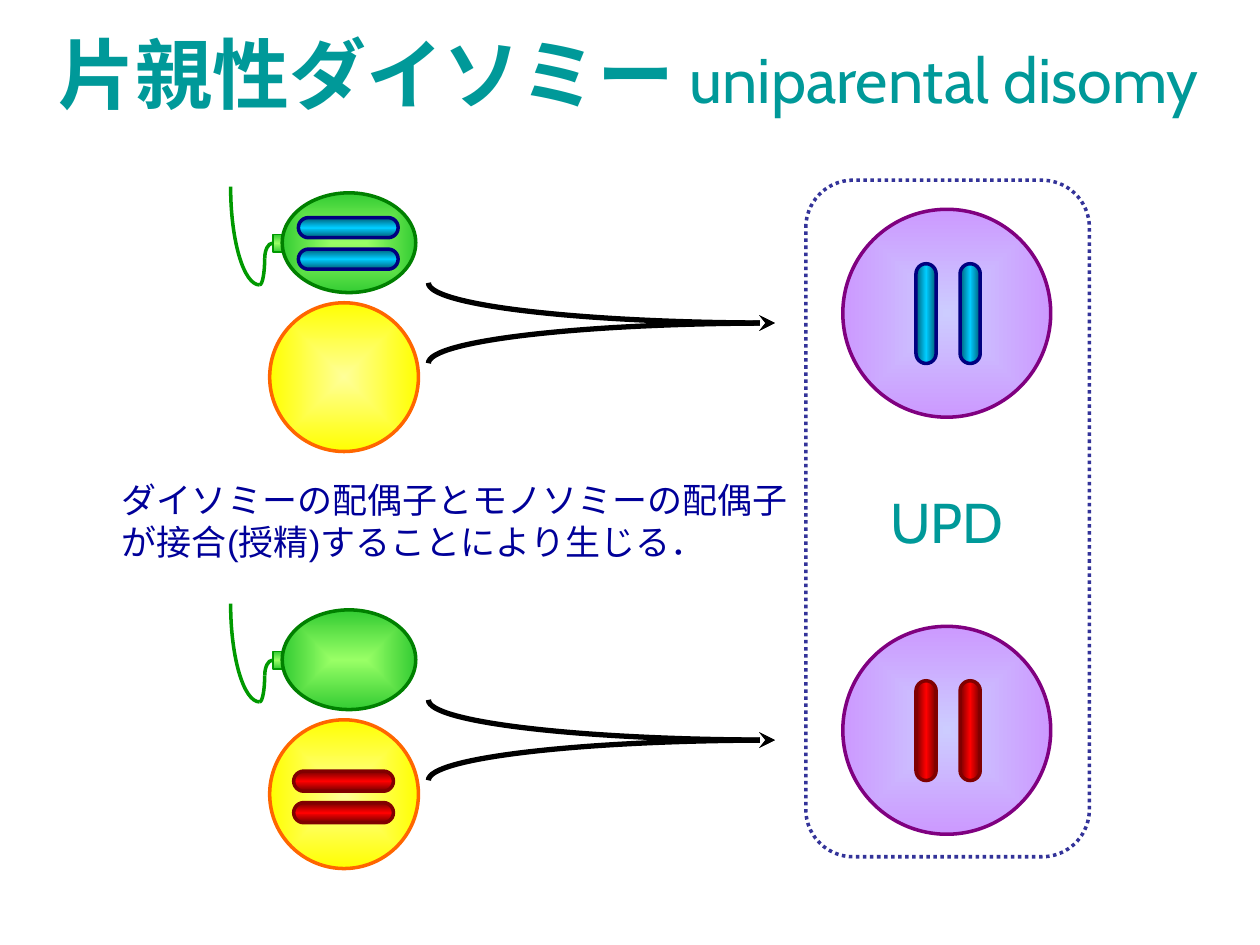
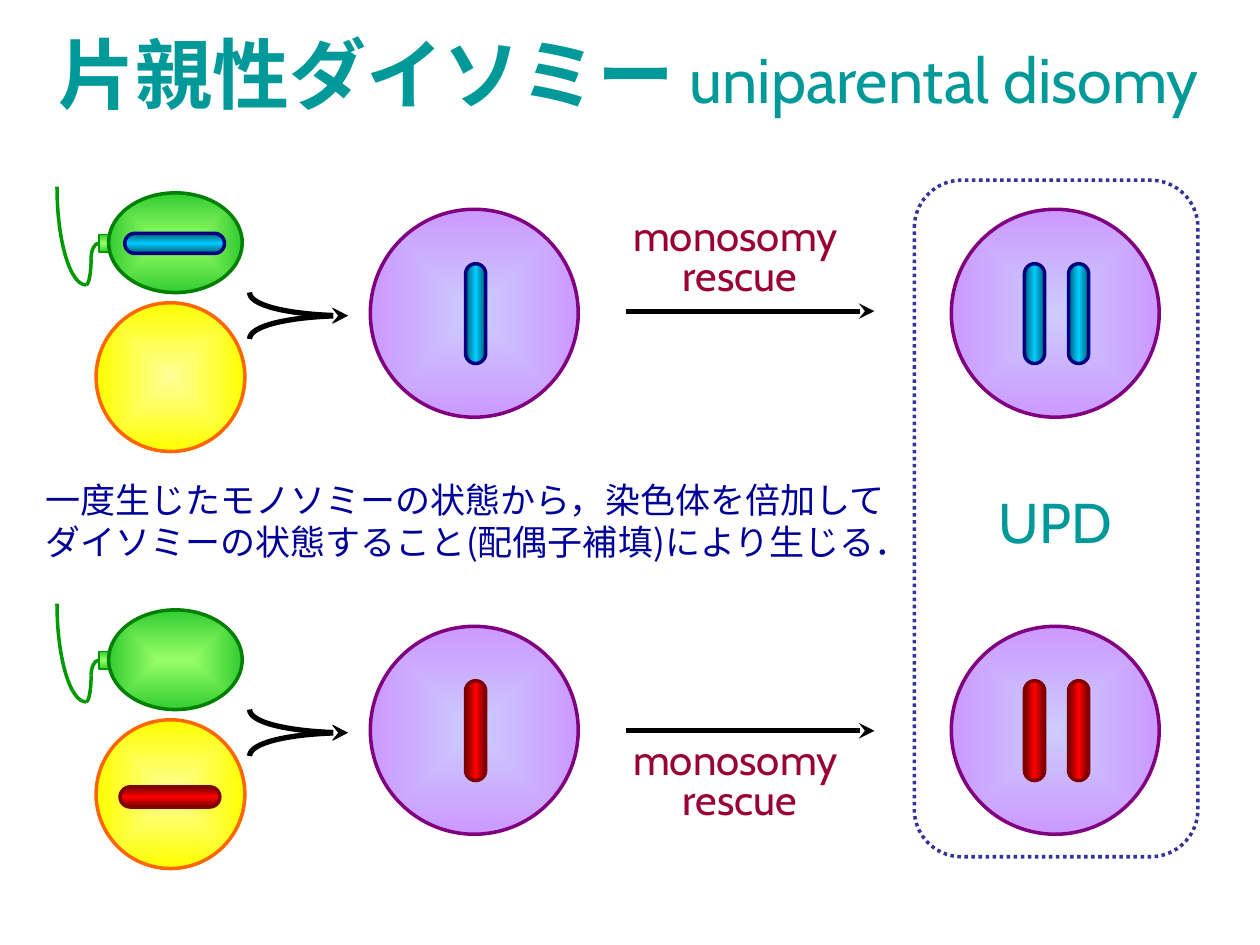
from lxml.etree import SubElement
from pptx import Presentation
from pptx.dml.color import RGBColor as RGB
from pptx.enum.dml import MSO_LINE as Dash
from pptx.enum.shapes import MSO_CONNECTOR as Link, MSO_SHAPE as Form
from pptx.enum.text import MSO_ANCHOR as Anchor, MSO_AUTO_SIZE as Fit, PP_ALIGN as Align
from pptx.oxml.ns import qn
from pptx.util import Pt

TEAL = RGB(0x00, 0x99, 0x99)
NAVY = RGB(0x00, 0x00, 0x99)
WINE = RGB(0x99, 0x00, 0x33)
BLACK = RGB(0x00, 0x00, 0x00)
FRAME = RGB(0x33, 0x33, 0x99)
TAIL = RGB(0x00, 0x99, 0x00)
LEAF = RGB(0x33, 0xCC, 0x33)
LIME = RGB(0x99, 0xFF, 0x66)
MOSS = RGB(0x00, 0x80, 0x00)
CREAM = RGB(0xFF, 0xFF, 0x99)
YOLK = RGB(0xFF, 0xFF, 0x00)
ORANGE = RGB(0xFF, 0x66, 0x00)
MIST = RGB(0xCC, 0xCC, 0xFF)
LILAC = RGB(0xCC, 0x99, 0xFF)
PURPLE = RGB(0x80, 0x00, 0x80)

# Edge, middle and outline of a chromosome
BLUE = RGB(0x00, 0x5E, 0x76), RGB(0x00, 0xCC, 0xFF), RGB(0x00, 0x00, 0x80)
RED = RGB(0x76, 0x00, 0x00), RGB(0xFF, 0x00, 0x00), RGB(0x80, 0x00, 0x00)

LATIN, GOTHIC, PLAIN = "Cabin", "Noto Sans CJK JP", "Arial"
TOP, STEP = 106.6, 238.3
ROWS = TOP, TOP + STEP
ARC = 0.55  # Bezier handle of a quarter ellipse


def write(frame, text, size=20, font=LATIN, color=TEAL, bold=False, align=Align.LEFT, gap=None):
    """Append text to the last paragraph; each line break opens a new one."""
    for i, line in enumerate(text.split("\n")):
        para = frame.add_paragraph() if i else frame.paragraphs[-1]
        para.alignment = align
        if gap:
            para.line_spacing = gap
        run = para.add_run()
        run.text = line
        run.font.size, run.font.bold, run.font.name = Pt(size), bold, font
        run.font.color.rgb = color
        east = SubElement(run.font._element, qn("a:ea"))
        east.set("typeface", LATIN)


class Deck:
    def __init__(self):
        self.prs = Presentation()
        self.prs.slide_width, self.prs.slide_height = Pt(720), Pt(540)
        self.slide = None

    def page(self):
        self.slide = self.prs.slides.add_slide(self.prs.slide_layouts[6])
        title = self.box(4.3, 11.5, 710, 60.5, Anchor.MIDDLE)
        mid = Align.CENTER
        write(title, "片親性ダイソミー", size=44, font=GOTHIC, bold=True, align=mid)
        write(title, " ", size=36, font=GOTHIC, bold=True, align=mid)
        write(title, "uniparental disomy", size=36, align=mid)

    def box(self, x, y, w, h, anchor=Anchor.TOP):
        frame = self.slide.shapes.add_textbox(Pt(x), Pt(y), Pt(w), Pt(h)).text_frame
        frame.word_wrap, frame.auto_size = True, Fit.SHAPE_TO_FIT_TEXT
        frame.vertical_anchor = anchor
        return frame

    def shape(self, form, x, y, w, h, ink, width=2, fill=(), radial=False):
        item = self.slide.shapes.add_shape(form, Pt(x), Pt(y), Pt(w), Pt(h))
        item.shadow.inherit = False
        item.line.color.rgb, item.line.width = ink, Pt(width)
        item.fill.background()
        if fill:
            self.blend(item, fill, radial)
        return item

    def blend(self, item, stops, radial):
        """Fill with evenly spaced stops, from the centre out or from top to bottom."""
        item.fill.gradient()
        grad = item._element.spPr.find(qn("a:gradFill"))
        for part in list(grad):
            grad.remove(part)
        grad.set("rotWithShape", "1")
        table = SubElement(grad, qn("a:gsLst"))
        for i, color in enumerate(stops):
            stop = SubElement(table, qn("a:gs"), pos=str(100000 * i // (len(stops) - 1)))
            SubElement(stop, qn("a:srgbClr"), val=str(color))
        if radial:
            way = SubElement(grad, qn("a:path"), path="shape")
            SubElement(way, qn("a:fillToRect"), dict.fromkeys("ltrb", "50000"))
        else:
            SubElement(grad, qn("a:lin"), ang="5400000", scaled="1")

    def curve(self, x, y, to_x, to_y, ink, width=2, arrow=False):
        """Quarter ellipse that leaves (x, y) level and ends upright."""
        bend = [(x + ARC * (to_x - x), y), (to_x, to_y - ARC * (to_y - y)), (to_x, to_y)]
        pen = self.slide.shapes.build_freeform(Pt(x), Pt(y))
        pen.add_line_segments([(Pt(a), Pt(b)) for a, b in bend], close=False)
        item = pen.convert_to_shape()
        item.shadow.inherit = False
        item.fill.background()
        item.line.color.rgb, item.line.width = ink, Pt(width)
        track = next(item._element.iter(qn("a:path")))
        cubic = SubElement(track, qn("a:cubicBezTo"))
        for line in track.findall(qn("a:lnTo")):
            cubic.append(line[0])
            track.remove(line)
        if arrow:
            SubElement(item.line._get_or_add_ln(), qn("a:headEnd"), type="stealth")

    def fork(self, x, tip, y, half):
        for side in (-half, half):
            self.curve(tip, y, x, y + side, BLACK, 3, arrow=True)

    def arrow(self, x, to_x, y):
        item = self.slide.shapes.add_connector(Link.STRAIGHT, Pt(x), Pt(y), Pt(to_x), Pt(y))
        item.line.color.rgb, item.line.width = BLACK, Pt(3)
        SubElement(item.line._get_or_add_ln(), qn("a:tailEnd"), type="stealth")
        SubElement(item._element.spPr, qn("a:effectLst"))

    def bars(self, x, y, kind, count, upright=False):
        """Row of chromosomes centred on (x, y)."""
        edge, core, ink = kind
        w, h = 57, 11.5
        for i in range(count):
            shift = (i - (count - 1) / 2) * (25.2 if upright else 18)
            left, top = (x + shift, y) if upright else (x, y + shift)
            bar = self.shape(Form.ROUNDED_RECTANGLE, left - w / 2, top - h / 2, w, h, ink,
                             fill=(edge, core, edge))
            bar.adjustments[0] = 0.5
            bar.rotation = 270 if upright else 0

    def sperm(self, x, y):
        low, bend, neck = (x + 16.6, y + 56.2), (x + 19.5, y + 41), (x + 23.8, y + 32.4)
        self.curve(*low, *bend, TAIL)
        self.shape(Form.RECTANGLE, x + 24, y + 27.4, 10, 10, TAIL, 1, (LEAF, LIME, LEAF))
        self.shape(Form.OVAL, x + 29.5, y + 3.6, 76.3, 57, MOSS, fill=(LIME, LEAF), radial=True)
        self.curve(*neck, *bend, TAIL)
        self.curve(*low, x, y, TAIL)

    def pairs(self, x, count):
        """Both sperm and egg pairs; one gamete of each carries chromosomes."""
        for y in ROWS:
            self.sperm(x, y)
            self.shape(Form.OVAL, x + 22.3, y + 66.4, 85, 85, ORANGE,
                       fill=(CREAM, YOLK), radial=True)
        self.bars(x + 67.2, TOP + 32.5, BLUE, count)
        self.bars(x + 64.5, TOP + STEP + 110.5, RED, count)

    def cells(self, x, count):
        size = 118.8
        for y, kind in zip(ROWS, (BLUE, RED)):
            mid = y + 72.4
            self.shape(Form.OVAL, x - size / 2, mid - size / 2, size, size, PURPLE,
                       fill=(MIST, LILAC), radial=True)
            self.bars(x + 0.8, mid + 0.2, kind, count, upright=True)

    def result(self, x):
        """Dotted frame with the two UPD cells, centred on x."""
        frame = self.shape(Form.ROUNDED_RECTANGLE, x - 80.5, 103, 162, 386.6, FRAME)
        frame.line.dash_style = Dash.ROUND_DOT
        write(self.box(x - 48, 275, 96, 46), "UPD", size=32, align=Align.CENTER)
        self.cells(x, 2)


def fusion(deck):
    deck.page()
    deck.pairs(131.8, 2)
    for y in ROWS:
        deck.fork(244.8, 442.8, y + 78, 23)
    note = deck.box(62.6, 270, 405.4, 55.5)
    write(note, "ダイソミーの配偶子とモノソミーの配偶子が接合(授精)することにより生じる．",
          font=PLAIN, color=NAVY)
    deck.result(541)


def rescue(deck):
    deck.page()
    deck.pairs(32.6, 1)
    for y in ROWS:
        deck.fork(142.6, 198.8, y + 73.8, 13.3)
    deck.cells(271, 1)
    for y, top in ((177.8, 121.7), (417.6, 421.2)):
        deck.arrow(357.8, 499.7, y)
        write(deck.box(343.4, top, 159, 54), "monosomy \nrescue", size=24, color=WINE,
              align=Align.CENTER, gap=0.8)
    note = deck.box(18.7, 270, 503.3, 55.5)
    for text, font in (
        ("一度生じたモノソミーの状態から，染色体を倍加してダイソミーの状態すること", PLAIN),
        ("(配偶子補填)", GOTHIC),
        ("により生じる．", PLAIN),
    ):
        write(note, text, font=font, color=NAVY)
    deck.result(603)


def main():
    deck = Deck()
    fusion(deck)
    rescue(deck)
    deck.prs.save("out.pptx")


if __name__ == "__main__":
    main()
